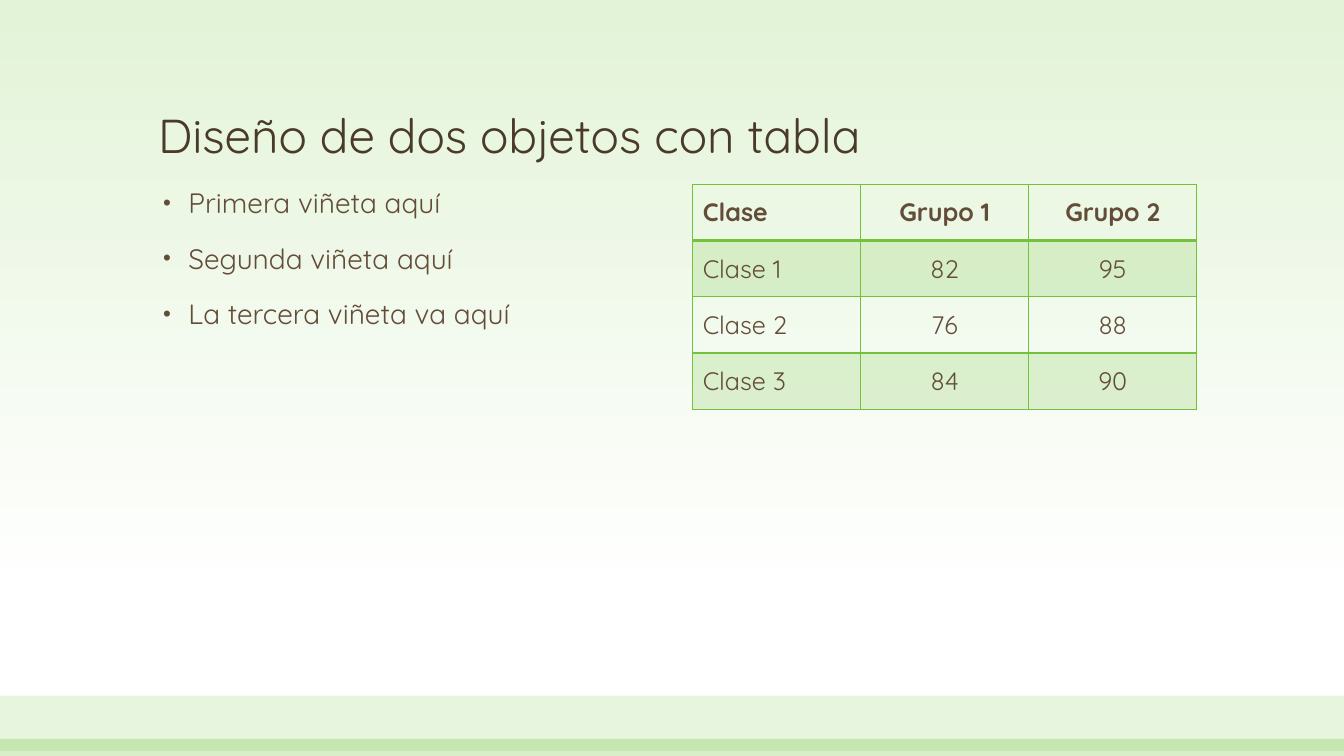
from dataclasses import dataclass

from lxml.etree import SubElement as Sub
from pptx import Presentation
from pptx.dml.color import RGBColor as RGB
from pptx.enum.shapes import MSO_SHAPE as Shape
from pptx.enum.text import MSO_ANCHOR as Anchor, PP_ALIGN as Align
from pptx.oxml.ns import qn
from pptx.util import Inches, Pt


@dataclass(frozen=True)
class Theme:
    font: str = "Quicksand"
    green: str = "72C23C"
    pale: str = "E3F3D8"
    white: str = "FFFFFF"
    dark: str = "4A3A2A"
    brown: str = "624D38"
    title: int = 34
    body: int = 20
    cell: int = 18


THEME = Theme()
BULLETS = ["Primera viñeta aquí", "Segunda viñeta aquí", "La tercera viñeta va aquí"]
ROWS = [
    ["Clase", "Grupo 1", "Grupo 2"],
    ["Clase 1", "82", "95"],
    ["Clase 2", "76", "88"],
    ["Clase 3", "84", "90"],
]


def add_run(para, text, size, color, bold=False):
    run = para.add_run()
    run.text = text
    font = run.font
    font.name, font.size, font.bold = THEME.font, Pt(size), bold
    font.color.rgb = RGB.from_string(color)


def tint(fill, props, alpha):
    """Fill with see-through green; alpha is a percentage."""
    fill.solid()
    fill.fore_color.rgb = RGB.from_string(THEME.green)
    color = props.find(qn("a:solidFill")).find(qn("a:srgbClr"))
    Sub(color, qn("a:alpha"), val=str(alpha * 1000))


def add_back(slide):
    fill = slide.background.fill
    fill.gradient()
    fill.gradient_angle = 270
    stops = [(0, THEME.pale), (0.79, THEME.white)]
    for stop, (place, color) in zip(fill.gradient_stops, stops):
        stop.position = place
        stop.color.rgb = RGB.from_string(color)


def add_band(slide, top, height, alpha):
    band = slide.shapes.add_shape(
        Shape.RECTANGLE, 0, Inches(top), Inches(13.33), Inches(height))
    band.shadow.inherit = False
    band.line.fill.background()
    tint(band.fill, band._element.spPr, alpha)


def add_box(slide, left, top, width, height, anchor=Anchor.TOP):
    box = slide.shapes.add_textbox(*map(Inches, (left, top, width, height)))
    frame = box.text_frame
    frame.word_wrap = True
    frame.vertical_anchor = anchor
    return frame


def add_title(slide, text):
    para = add_box(slide, 1.47, 0.48, 10.4, 1.19, Anchor.BOTTOM).paragraphs[0]
    para.line_spacing = 0.9
    add_run(para, text, THEME.title, THEME.dark)


def add_list(slide, items):
    frame = add_box(slide, 1.47, 1.83, 5, 4.75)
    for index, item in enumerate(items):
        para = frame.add_paragraph() if index else frame.paragraphs[0]
        para.line_spacing = 0.9
        para.space_before = Pt(18 if index else 0)
        props = para._p.get_or_add_pPr()
        props.set("marL", str(Inches(0.3)))
        props.set("indent", str(Inches(-0.25)))
        Sub(props, qn("a:buSzPct"), val="80000")
        Sub(props, qn("a:buFont"), typeface="Arial")
        Sub(props, qn("a:buChar"), char="•")
        add_run(para, item, THEME.body, THEME.brown)


def add_edge(props, side, width):
    line = Sub(props, qn(f"a:ln{side}"), w=str(Pt(width)))
    Sub(Sub(line, qn("a:solidFill")), qn("a:srgbClr"), val=THEME.green)


def add_grid(slide, rows):
    table = slide.shapes.add_table(
        len(rows), len(rows[0]),
        *map(Inches, (6.87, 1.83, 5, 2.23))).table
    for r, row in enumerate(rows):
        for c, text in enumerate(row):
            cell = table.cell(r, c)
            cell.vertical_anchor = Anchor.MIDDLE
            # Edges come before the fill; the header rule is thicker
            props = cell._tc.get_or_add_tcPr()
            for side in "LRTB":
                thick = (r, side) in [(0, "B"), (1, "T")]
                add_edge(props, side, 2 if thick else 1)
            if r % 2:
                tint(cell.fill, props, 20)
            else:
                cell.fill.background()
            para = cell.text_frame.paragraphs[0]
            para.alignment = Align.CENTER if c else Align.LEFT
            add_run(para, text, THEME.cell, THEME.brown, bold=r == 0)


def main():
    deck = Presentation()
    deck.slide_width, deck.slide_height = Inches(13.33), Inches(7.5)
    slide = deck.slides.add_slide(deck.slide_layouts[6])

    # Background and footer bands
    add_back(slide)
    add_band(slide, 6.9, 0.55, 17)
    add_band(slide, 7.33, 0.17, 28)

    # Content
    add_title(slide, "Diseño de dos objetos con tabla")
    add_grid(slide, ROWS)
    add_list(slide, BULLETS)

    deck.save("out.pptx")


if __name__ == "__main__":
    main()
